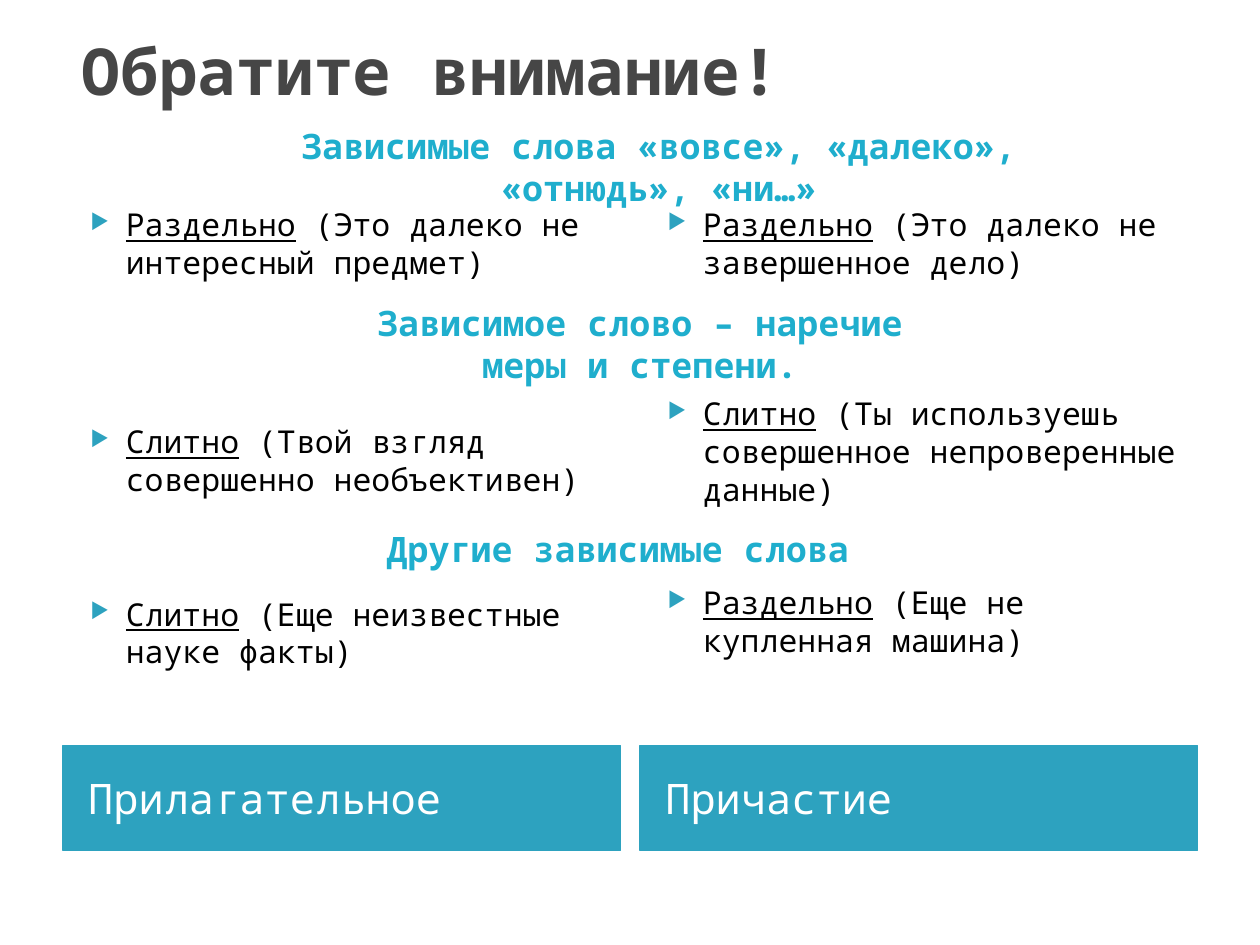
from lxml.etree import SubElement
from pptx import Presentation
from pptx.dml.color import RGBColor
from pptx.enum.shapes import MSO_SHAPE
from pptx.enum.text import MSO_ANCHOR as Anchor, PP_ALIGN as Align
from pptx.oxml.ns import qn
from pptx.util import Pt

FONT = "Noto Sans Mono"
DARK = RGBColor(0x46, 0x46, 0x46)
TEAL = RGBColor(0x2D, 0xA2, 0xBF)
CYAN = RGBColor(0x1F, 0xAE, 0xCD)
BLACK = RGBColor(0, 0, 0)
WHITE = RGBColor(0xFF, 0xFF, 0xFF)

# Content
TITLE = "Обратите внимание!"
HEADINGS = [  # text, (left, top, width, height), alignment
    ("Зависимые слова «вовсе», «далеко», «отнюдь», «ни…»",
     (134.6, 67.7, 483.8, 55.4), Align.CENTER),
    ("Зависимое слово – наречие меры и степени.",
     (185.8, 168.5, 360, 55.4), Align.CENTER),
    ("Другие зависимые слова", (213.8, 298.1, 331.9, 31.7), Align.LEFT),
]
COLUMNS = [  # label, gaps above the examples, (rule, example)
    ("Прилагательное", (0, 80.8, 55.2), [
        ("Раздельно", " (Это далеко не интересный предмет)"),
        ("Слитно", " (Твой взгляд совершенно необъективен)"),
        ("Слитно", " (Еще неизвестные науке факты)"),
    ]),
    ("Причастие", (0, 64.8, 43.2), [
        ("Раздельно", " (Это далеко не завершенное дело)"),
        ("Слитно", " (Ты используешь совершенное непроверенные данные)"),
        ("Раздельно", " (Еще не купленная машина)"),
    ]),
]

# Layout
MARGIN, COLUMN_WIDTH, COLUMN_STEP = 36, 318.5, 329.8
EXAMPLES_TOP, EXAMPLES_HEIGHT = 113.8, 310.3
LABEL_TOP, LABEL_HEIGHT = 426, 60


def add_run(paragraph, text, size=18, color=BLACK, bold=False, underline=False):
    run = paragraph.add_run()
    run.text = text
    font = run.font
    font.name, font.size, font.bold, font.underline = FONT, Pt(size), bold, underline
    font.color.rgb = color


def add_box(slide, box, anchor=Anchor.TOP):
    shape = slide.shapes.add_textbox(*map(Pt, box))
    frame = shape.text_frame
    frame.word_wrap = True
    frame.vertical_anchor = anchor
    return frame


def add_bullet(paragraph):
    properties = paragraph._p.get_or_add_pPr()
    properties.set("marL", str(Pt(28.8)))
    properties.set("indent", str(Pt(-20.2)))
    color = SubElement(properties, qn("a:buClr"))
    SubElement(color, qn("a:srgbClr"), val=str(TEAL))
    SubElement(properties, qn("a:buSzPct"), val="68000")
    SubElement(properties, qn("a:buChar"), char="▶")


def add_label(slide, text, left):
    shape = slide.shapes.add_shape(
        MSO_SHAPE.RECTANGLE, Pt(left), Pt(LABEL_TOP), Pt(COLUMN_WIDTH), Pt(LABEL_HEIGHT))
    shape.shadow.inherit = False
    shape.fill.solid()
    shape.fill.fore_color.rgb = TEAL
    shape.line.color.rgb = TEAL
    shape.line.width = Pt(0.75)
    frame = shape.text_frame
    frame.margin_left = Pt(14.4)
    frame.vertical_anchor = Anchor.MIDDLE
    paragraph = frame.paragraphs[0]
    paragraph.alignment = Align.LEFT
    add_run(paragraph, text, size=24, color=WHITE)


def add_examples(slide, examples, gaps, left):
    frame = add_box(slide, (left, EXAMPLES_TOP, COLUMN_WIDTH, EXAMPLES_HEIGHT))
    for index, ((rule, example), gap) in enumerate(zip(examples, gaps)):
        paragraph = frame.add_paragraph() if index else frame.paragraphs[0]
        add_bullet(paragraph)
        if gap:
            paragraph.space_before = Pt(gap)
        add_run(paragraph, rule, underline=True)
        add_run(paragraph, example)


def main():
    presentation = Presentation()
    presentation.slide_width, presentation.slide_height = Pt(720), Pt(540)
    slide = presentation.slides.add_slide(presentation.slide_layouts[6])

    # Title
    frame = add_box(slide, (39.6, 11.5, 648, 56.2), Anchor.MIDDLE)
    add_run(frame.paragraphs[0], TITLE, size=36.9, color=DARK, bold=True)

    # Two columns: examples above, label below
    for index, (label, gaps, examples) in enumerate(COLUMNS):
        left = MARGIN + index * COLUMN_STEP
        add_label(slide, label, left)
        add_examples(slide, examples, gaps, left)

    # Headings shared by both columns
    for text, box, alignment in HEADINGS:
        paragraph = add_box(slide, box).paragraphs[0]
        paragraph.alignment = alignment
        add_run(paragraph, text, size=20, color=CYAN, bold=True)

    presentation.save("out.pptx")


if __name__ == "__main__":
    main()
